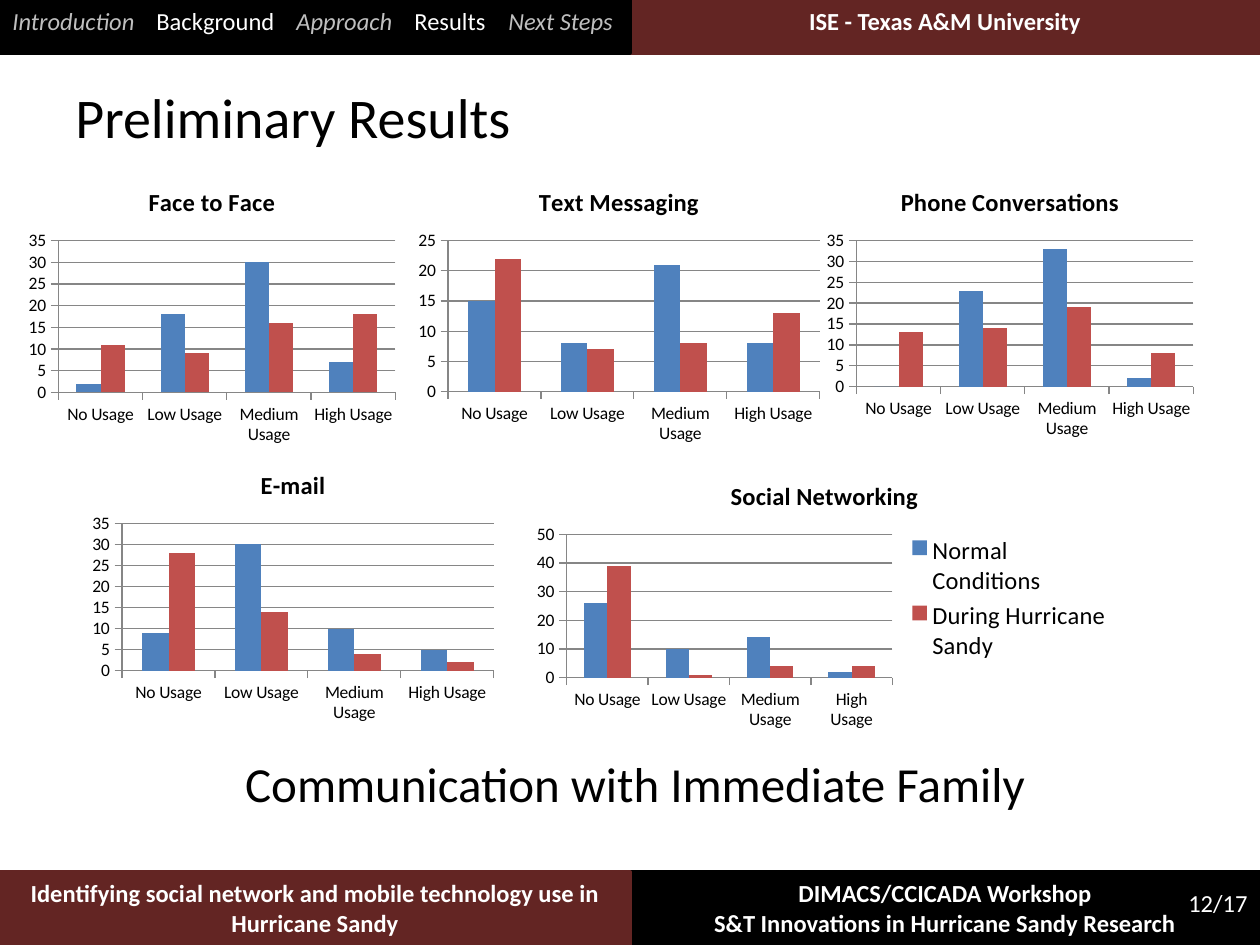
from pptx import Presentation
from pptx.chart.data import CategoryChartData as Data
from pptx.dml.color import RGBColor as Rgb
from pptx.enum.chart import XL_CHART_TYPE as Kind, XL_LEGEND_POSITION as Spot, XL_TICK_MARK as Tick
from pptx.enum.shapes import MSO_SHAPE as Shape
from pptx.enum.text import MSO_ANCHOR as Anchor, PP_ALIGN as Align
from pptx.oxml.xmlchemy import OxmlElement as Node
from pptx.util import Pt

BLACK = Rgb(0, 0, 0)
WHITE = Rgb(255, 255, 255)
MAROON = Rgb(0x63, 0x25, 0x23)
SILVER = Rgb(0xBF, 0xBF, 0xBF)
GRAY = Rgb(0x86, 0x86, 0x86)
BLUE = Rgb(0x4F, 0x81, 0xBD)
RED = Rgb(0xC0, 0x50, 0x4D)
FONT = "Calibri"
USAGE = ["No Usage", "Low Usage", "Medium Usage", "High Usage"]
NAMES = ["Normal Conditions", "During Hurricane Sandy"]
STEPS = [("Introduction", False), ("Background", True), ("Approach", False),
         ("Results", True), ("Next Steps", False)]
STOPS = [144, 284, 402, 496]
CHARTS = [
    ("Face to Face", (21, 168, 382, 282), [2, 18, 30, 7], [11, 9, 16, 18]),
    ("Text Messaging", (410, 168, 418, 281), [15, 8, 21, 8], [22, 7, 8, 13]),
    ("Phone Conversations", (819, 168, 382, 276), [0, 23, 33, 2], [13, 14, 19, 8]),
    ("E-mail", (84, 451, 418, 277), [9, 30, 10, 5], [28, 14, 4, 2]),
    ("Social Networking", (525, 462, 599, 273), [26, 10, 14, 2], [39, 1, 4, 4]),
]


def px(num):
    """Turn px into EMU."""
    return round(num * 914400 / 126)


class Deck:
    """Holds the style and the current slide."""

    def __init__(self):
        self.prs = Presentation()
        self.prs.slide_width, self.prs.slide_height = px(1260), px(945)
        self.slide = self.prs.slides.add_slide(self.prs.slide_layouts[6])
        self.shapes = self.slide.shapes

    def style(self, font, size, color=BLACK, bold=False, slant=False):
        font.name, font.size = FONT, Pt(size)
        font.bold, font.italic = bold, slant
        font.color.rgb = color

    def band(self, box, color):
        rect = self.shapes.add_shape(Shape.RECTANGLE, *map(px, box))
        rect.shadow.inherit = False
        rect.fill.solid()
        rect.fill.fore_color.rgb = rect.line.color.rgb = color
        rect.line.width = Pt(2)

    def text(self, box, lines, align=Align.LEFT, anchor=Anchor.TOP, stops=()):
        frame = self.shapes.add_textbox(*map(px, box)).text_frame
        frame.word_wrap, frame.vertical_anchor = True, anchor
        for num, runs in enumerate(lines):
            para = frame.add_paragraph() if num else frame.paragraphs[0]
            para.alignment = align
            for words, *look in runs:
                run = para.add_run()
                run.text = words
                self.style(run.font, *look)
            if stops:
                tabs = Node("a:tabLst")
                for stop in stops:
                    tab = Node("a:tab")
                    tab.set("pos", str(px(stop)))
                    tab.set("algn", "l")
                    tabs.append(tab)
                para._p.get_or_add_pPr().append(tabs)

    def chart(self, title, box, rows, legend=False):
        data = Data()
        data.categories = USAGE
        for name, row in zip(NAMES, rows):
            data.add_series(name, row)
        chart = self.shapes.add_chart(Kind.COLUMN_CLUSTERED, *map(px, box), data).chart
        self.style(chart.font, 10)
        chart.has_title = True
        run = chart.chart_title.text_frame.paragraphs[0].add_run()
        run.text = title
        self.style(run.font, 14, bold=True)
        plot = chart.plots[0]
        plot.gap_width, plot.overlap, plot.vary_by_categories = 150, 0, False
        for bars, color in zip(plot.series, (BLUE, RED)):
            bars.format.fill.solid()
            bars.format.fill.fore_color.rgb = color
        axes = chart.category_axis, chart.value_axis
        for axis in axes:
            axis.major_tick_mark, axis.minor_tick_mark = Tick.OUTSIDE, Tick.NONE
        chart.value_axis.has_major_gridlines = True
        for part in (*axes, chart.value_axis.major_gridlines):
            part.format.line.color.rgb = GRAY
            part.format.line.width = Pt(0.75)
        chart.has_legend = legend
        if legend:
            chart.legend.position = Spot.RIGHT
            chart.legend.include_in_layout = False
            self.style(chart.legend.font, 14)

    def save(self):
        self.prs.save("out.pptx")


def main():
    deck = Deck()
    head, foot = (0, 53), (872, 73)
    for left, (top, high), color in [(630, foot, BLACK), (0, foot, MAROON),
                                     (630, head, MAROON), (0, head, BLACK)]:
        deck.band((left, top, 630, high), color)
    bold = 14, WHITE, True
    deck.text((1144, 882, 116, 43), [[("12/17", 14, WHITE)]], Align.RIGHT)
    deck.text((0, 872, 630, 72), [[(
        "Identifying social network and mobile technology use in Hurricane Sandy",
        *bold)]], Align.CENTER)
    deck.text((630, 872, 630, 72), [
        [("DIMACS/CCICADA Workshop", *bold)],
        [("S&T Innovations in Hurricane Sandy Research", *bold)]], Align.CENTER)
    deck.text((630, 0, 630, 43), [[("ISE - Texas A&M University", *bold)]], Align.CENTER)
    deck.text((63, 38, 1134, 157), [[("Preliminary Results", 32)]], anchor=Anchor.MIDDLE)
    deck.text((5, 747, 1260, 72), [[("Communication with Immediate Family", 28)]],
              Align.CENTER)
    for title, box, *rows in CHARTS:
        deck.chart(title, box, rows, title == "Social Networking")
    steps = [("\t" * (num > 0) + name, 14, WHITE if done else SILVER, False, not done)
             for num, (name, done) in enumerate(STEPS)]
    deck.text((0, 0, 651, 43), [steps], stops=STOPS)
    deck.save()


if __name__ == "__main__":
    main()
